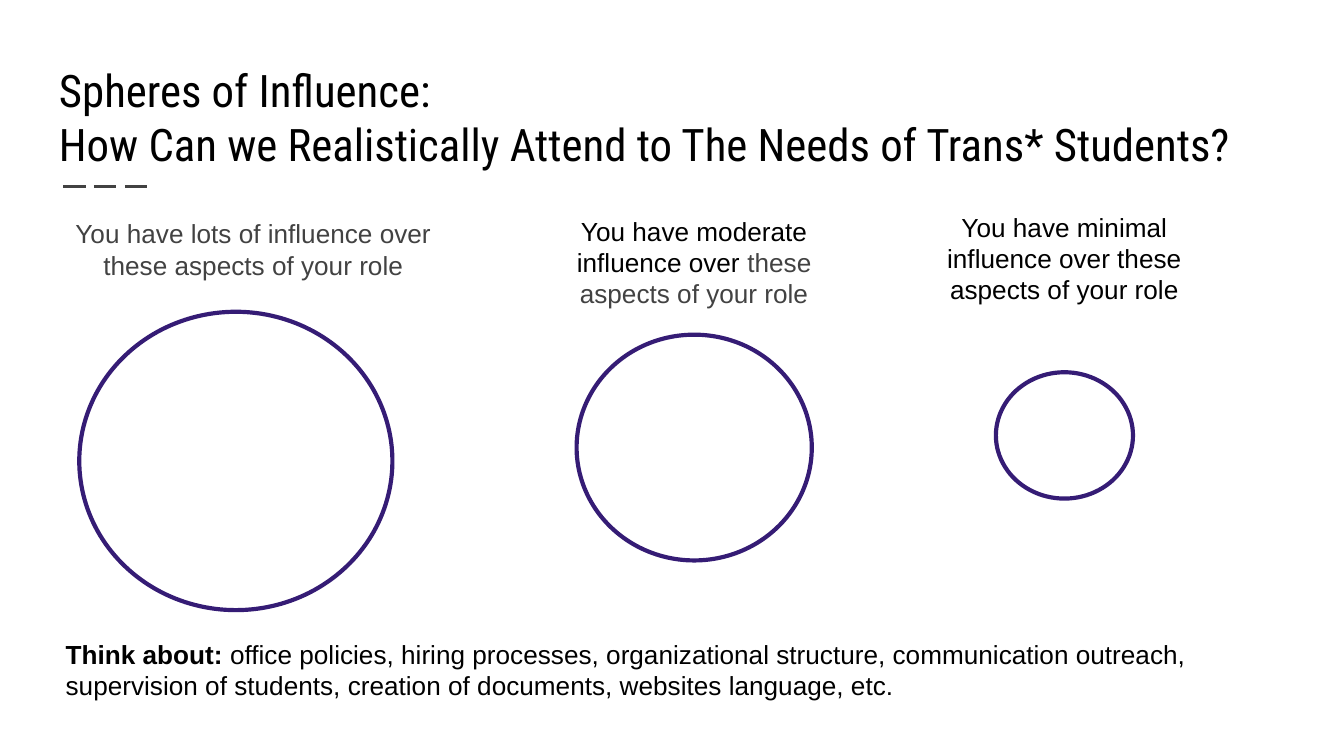
from lxml.etree import SubElement
from pptx import Presentation
from pptx.dml.color import RGBColor
from pptx.enum.dml import MSO_LINE
from pptx.enum.shapes import MSO_CONNECTOR, MSO_SHAPE
from pptx.enum.text import MSO_ANCHOR, PP_ALIGN
from pptx.oxml.ns import qn
from pptx.util import Inches, Pt

BLACK = RGBColor(0x00, 0x00, 0x00)
GREY = RGBColor(0x42, 0x42, 0x42)
PURPLE = RGBColor(0x35, 0x1C, 0x75)

TITLE = [
    [("Spheres of Influence:", BLACK, False)],
    [("How Can we Realistically Attend to The Needs of Trans* Students?", BLACK, False)],
]
SPHERES = [
    {
        "label": [("You have lots of influence over these aspects of your role", GREY, False)],
        "label_box": (0.34, 1.52, 3.09, 0.7),
        "circle": (0.59, 2.32, 2.33, 2.22),
    },
    {
        "label": [("You have moderate influence over ", BLACK, False),
                  ("these aspects of your role", GREY, False)],
        "label_box": (3.9, 1.5, 2.53, 0.85),
        "circle": (4.29, 2.49, 1.75, 1.68),
    },
    {
        "label": [("You have minimal influence over these aspects of your role", BLACK, False)],
        "label_box": (6.69, 1.47, 2.46, 0.85),
        "circle": (7.41, 2.77, 1.02, 0.94),
    },
]
PROMPT = [
    ("Think about:", BLACK, True),
    (" office policies, hiring processes, organizational structure, communication outreach, "
     "supervision of students, creation of documents, websites language, etc.", BLACK, False),
]


def add_text(slide, box, paragraphs, font="Arial", size=14,
             align=PP_ALIGN.LEFT, anchor=MSO_ANCHOR.TOP):
    tf = slide.shapes.add_textbox(*map(Inches, box)).text_frame
    tf.word_wrap = True
    tf.vertical_anchor = anchor
    tf.margin_left = tf.margin_right = tf.margin_top = tf.margin_bottom = Inches(0.1)
    for i, runs in enumerate(paragraphs):
        p = tf.add_paragraph() if i else tf.paragraphs[0]
        p.alignment = align
        p.font.name = font
        p.font.size = Pt(size)
        for text, color, bold in runs:
            r = p.add_run()
            r.text = text
            r.font.color.rgb = color
            r.font.bold = bold


def add_rule(slide, left, right, y):
    line = slide.shapes.add_connector(
        MSO_CONNECTOR.STRAIGHT, *map(Inches, (left, y, right, y)))
    line.line.color.rgb = GREY
    line.line.width = Pt(1.5)
    line.line.dash_style = MSO_LINE.LONG_DASH
    SubElement(line._element.spPr, qn("a:effectLst"))


def add_circle(slide, box):
    sp = slide.shapes.add_shape(MSO_SHAPE.OVAL, *map(Inches, box))
    sp.shadow.inherit = False
    sp.fill.background()
    sp.line.color.rgb = PURPLE
    sp.line.width = Pt(2.25)


def main():
    prs = Presentation()
    prs.slide_width = Inches(10)
    prs.slide_height = prs.slide_width * 9 // 16
    slide = prs.slides.add_slide(prs.slide_layouts[6])

    add_rule(slide, 0.47, 1.14, 1.39)
    add_text(slide, (0.34, 0.24, 9.25, 1.13), TITLE,
             font="Roboto Condensed", size=24, anchor=MSO_ANCHOR.BOTTOM)
    for sphere in SPHERES:
        add_circle(slide, sphere["circle"])
        add_text(slide, sphere["label_box"], [sphere["label"]], align=PP_ALIGN.CENTER)
    add_text(slide, (0.39, 4.65, 8.94, 0.62), [PROMPT])

    prs.save("out.pptx")


if __name__ == "__main__":
    main()
